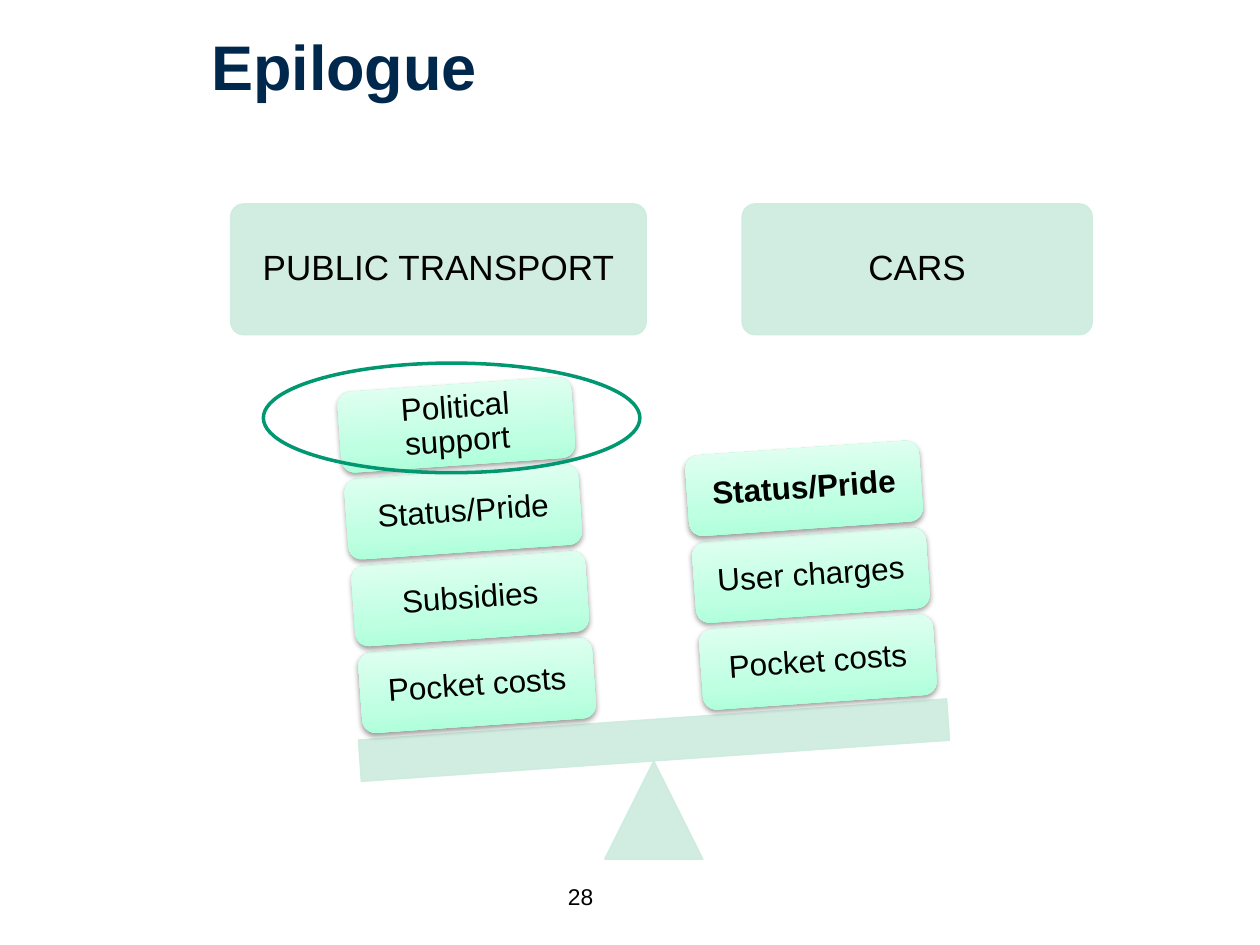
from lxml.etree import SubElement
from pptx import Presentation
from pptx.dml.color import RGBColor
from pptx.enum.shapes import MSO_SHAPE
from pptx.enum.text import MSO_ANCHOR, PP_ALIGN
from pptx.oxml.ns import qn
from pptx.util import Cm, Pt

NAVY = RGBColor(0x00, 0x28, 0x4C)
BLACK = RGBColor(0x00, 0x00, 0x00)
MINT = RGBColor(0xCC, 0xEC, 0xDE)
GREEN = RGBColor(0x00, 0x97, 0x71)
BLOCK_GRADIENT = (
    (0, RGBColor(0xA5, 0xFF, 0xD6)),
    (35, RGBColor(0xBF, 0xFF, 0xE2)),
    (100, RGBColor(0xE7, 0xFF, 0xF3)),
)
TILT = -4


class BalanceSlide:
    font_name = "Arial"

    def __init__(self, presentation):
        self.slide = presentation.slides.add_slide(presentation.slide_layouts[6])

    def label(self, shape, text, size, color=BLACK, bold=False,
              alignment=PP_ALIGN.CENTER, inset=(0.25, 0.13), line_spacing=None):
        text_frame = shape.text_frame
        text_frame.word_wrap = True
        text_frame.vertical_anchor = MSO_ANCHOR.MIDDLE
        text_frame.margin_left = text_frame.margin_right = Cm(inset[0])
        text_frame.margin_top = text_frame.margin_bottom = Cm(inset[1])
        text_frame.text = text
        paragraph = text_frame.paragraphs[0]
        paragraph.alignment = alignment
        if line_spacing:
            paragraph.line_spacing = line_spacing
        font = paragraph.runs[0].font
        font.name = self.font_name
        font.size = Pt(size)
        font.bold = bold
        font.color.rgb = color

    def text(self, left, top, width, height, text, size, **style):
        box = self.slide.shapes.add_textbox(Cm(left), Cm(top), Cm(width), Cm(height))
        self.label(box, text, size, **style)

    def shape(self, kind, left, top, width, height, rotation=0):
        shape = self.slide.shapes.add_shape(
            kind, Cm(left), Cm(top), Cm(width), Cm(height))
        shape.rotation = rotation
        shape.shadow.inherit = False
        return shape

    def plain(self, kind, left, top, width, height, rotation=0):
        shape = self.shape(kind, left, top, width, height, rotation)
        shape.fill.solid()
        shape.fill.fore_color.rgb = MINT
        shape.line.color.rgb = MINT
        shape.line.width = Pt(0.75)
        for color in shape._element.spPr.iter(qn("a:srgbClr")):
            SubElement(color, qn("a:alpha"), val="90000")
        return shape

    def header(self, left, width, text):
        shape = self.plain(MSO_SHAPE.ROUNDED_RECTANGLE, left, 4.11, width, 2.64)
        shape.adjustments[0] = 0.1
        self.label(shape, text, 20, inset=(0.2, 0.2), line_spacing=0.9)

    def block(self, left, top, text, bold):
        shape = self.shape(MSO_SHAPE.ROUNDED_RECTANGLE, left, top, 4.72, 1.63, TILT)
        shape.line.fill.background()
        shape.fill.gradient()
        shape.fill.gradient_angle = 90
        properties = shape._element.spPr
        stops = properties.find(qn("a:gradFill")).find(qn("a:gsLst"))
        stops.clear()
        for position, color in BLOCK_GRADIENT:
            stop = SubElement(stops, qn("a:gs"), pos=str(position * 1000))
            SubElement(stop, qn("a:srgbClr"), val=str(color))
        shadow = SubElement(
            properties.find(qn("a:effectLst")), qn("a:outerShdw"),
            blurRad="40000", dist="20000", dir="5400000", rotWithShape="0")
        shadow_color = SubElement(shadow, qn("a:srgbClr"), val=str(BLACK))
        SubElement(shadow_color, qn("a:alpha"), val="38000")
        self.label(shape, text, 18, bold=bold, inset=(0.18, 0.18), line_spacing=0.9)

    def stack(self, left, top, labels, bold_label=None):
        for level, label in enumerate(labels):
            self.block(left - 0.14 * level, top - 1.75 * level, label,
                       label == bold_label)

    def highlight(self, left, top, width, height):
        shape = self.shape(MSO_SHAPE.OVAL, left, top, width, height)
        shape.fill.background()
        shape.line.color.rgb = GREEN
        shape.line.width = Pt(2)


def main():
    presentation = Presentation()
    presentation.slide_width = Cm(25.4)
    presentation.slide_height = Cm(19.05)

    balance = BalanceSlide(presentation)
    balance.text(9.04, 17.4, 5.33, 1.35, "28", 13)
    balance.text(4.01, 0.18, 20.98, 2.29, "Epilogue", 36,
                 color=NAVY, bold=True, alignment=PP_ALIGN.LEFT)
    balance.header(4.65, 8.38, "PUBLIC TRANSPORT")
    balance.header(14.96, 7.06, "CARS")
    balance.plain(MSO_SHAPE.ISOSCELES_TRIANGLE, 12.19, 15.34, 1.98, 1.98)
    balance.plain(MSO_SHAPE.RECTANGLE, 7.24, 14.5, 11.89, 0.84, TILT)
    balance.stack(7.26, 13, ("Pocket costs", "Subsidies", "Status/Pride",
                             "Political support"))
    balance.stack(14.13, 12.53, ("Pocket costs", "User charges", "Status/Pride"),
                  bold_label="Status/Pride")
    balance.highlight(5.31, 7.32, 7.59, 2.21)

    presentation.save("out.pptx")


if __name__ == "__main__":
    main()
